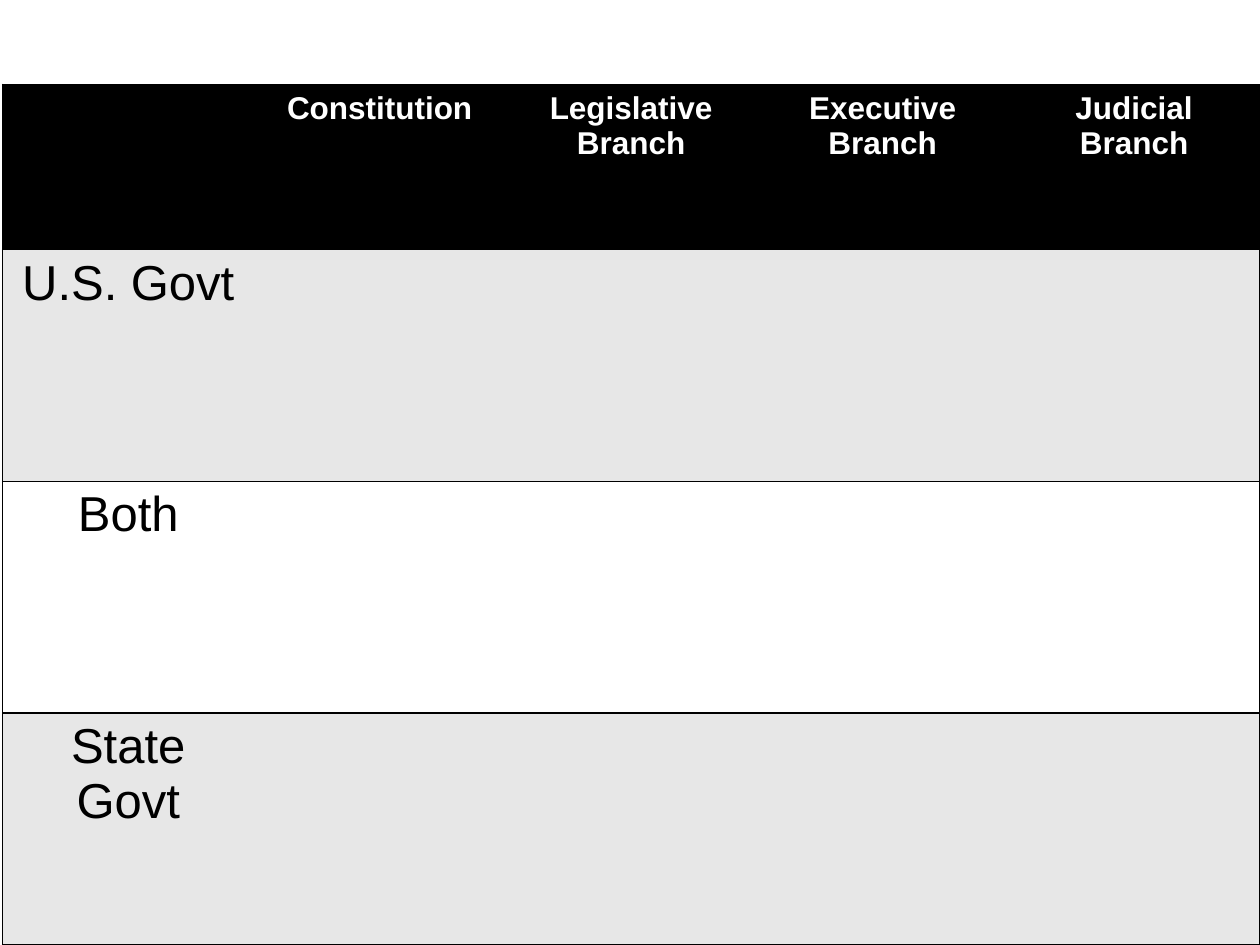
from dataclasses import dataclass

from lxml import etree
from pptx import Presentation
from pptx.dml.color import RGBColor
from pptx.enum.text import PP_ALIGN
from pptx.oxml.ns import qn
from pptx.util import Inches, Pt

CENTER = PP_ALIGN.CENTER
BLACK = RGBColor(0x00, 0x00, 0x00)
WHITE = RGBColor(0xFF, 0xFF, 0xFF)
GRAY = RGBColor(0xE7, 0xE7, 0xE7)

FONT_NAME = "Arial"
BORDER_WIDTH = Pt(1)
TABLE_LEFT, TABLE_TOP = Inches(0.02), Inches(0.67)
TABLE_WIDTH = Inches(9.98)
BLANK_LAYOUT = 6


@dataclass(frozen=True)
class TableRow:
    texts: tuple[str, ...]
    height: float
    fill: RGBColor
    color: RGBColor = BLACK
    size: int = 28
    bold: bool = False


HEADER = TableRow(
    ("", "Constitution", "Legislative Branch", "Executive Branch", "Judicial Branch"),
    1.31, BLACK, WHITE, 18, True,
)
COLUMN_COUNT = len(HEADER.texts)
BODY = [
    TableRow((label,) + ("",) * (COLUMN_COUNT - 1), 1.84, fill)
    for label, fill in (("U.S. Govt", GRAY), ("Both", WHITE), ("State Govt", GRAY))
]
ROWS = [HEADER, *BODY]


def set_borders(cell, visible_sides: str) -> None:
    """Draw the named sides (L, R, T, B) in black and hide the others."""
    properties = cell._tc.get_or_add_tcPr()
    for position, side in enumerate("LRTB"):
        line = etree.Element(qn(f"a:ln{side}"), w=str(BORDER_WIDTH))
        if side in visible_sides:
            fill = etree.SubElement(line, qn("a:solidFill"))
            etree.SubElement(fill, qn("a:srgbClr"), val=str(BLACK))
        else:
            etree.SubElement(line, qn("a:noFill"))
        properties.insert(position, line)


def fill_cell(cell, text: str, row: TableRow) -> None:
    cell.fill.solid()
    cell.fill.fore_color.rgb = row.fill
    if not text:
        return
    cell.text = text
    para = cell.text_frame.paragraphs[0]
    para.alignment = CENTER
    para.font.name = FONT_NAME
    para.font.size = Pt(row.size)
    para.font.bold = row.bold
    para.font.color.rgb = row.color


def add_branch_table(page, rows: list[TableRow]) -> None:
    height = Inches(sum(row.height for row in rows))
    table = page.shapes.add_table(
        len(rows), COLUMN_COUNT, TABLE_LEFT, TABLE_TOP, TABLE_WIDTH, height
    ).table
    for row_index, row in enumerate(rows):
        table.rows[row_index].height = Inches(row.height)
        for column_index, text in enumerate(row.texts):
            cell = table.cell(row_index, column_index)
            fill_cell(cell, text, row)
            # Horizontal rules everywhere, vertical ones only at the outer edges
            left = "L" if column_index == 0 else ""
            right = "R" if column_index == COLUMN_COUNT - 1 else ""
            set_borders(cell, "TB" + left + right)


def main() -> None:
    deck = Presentation()
    deck.slide_width, deck.slide_height = Inches(10), Inches(7.5)
    page = deck.slides.add_slide(deck.slide_layouts[BLANK_LAYOUT])
    add_branch_table(page, ROWS)
    deck.save("out.pptx")


if __name__ == "__main__":
    main()
